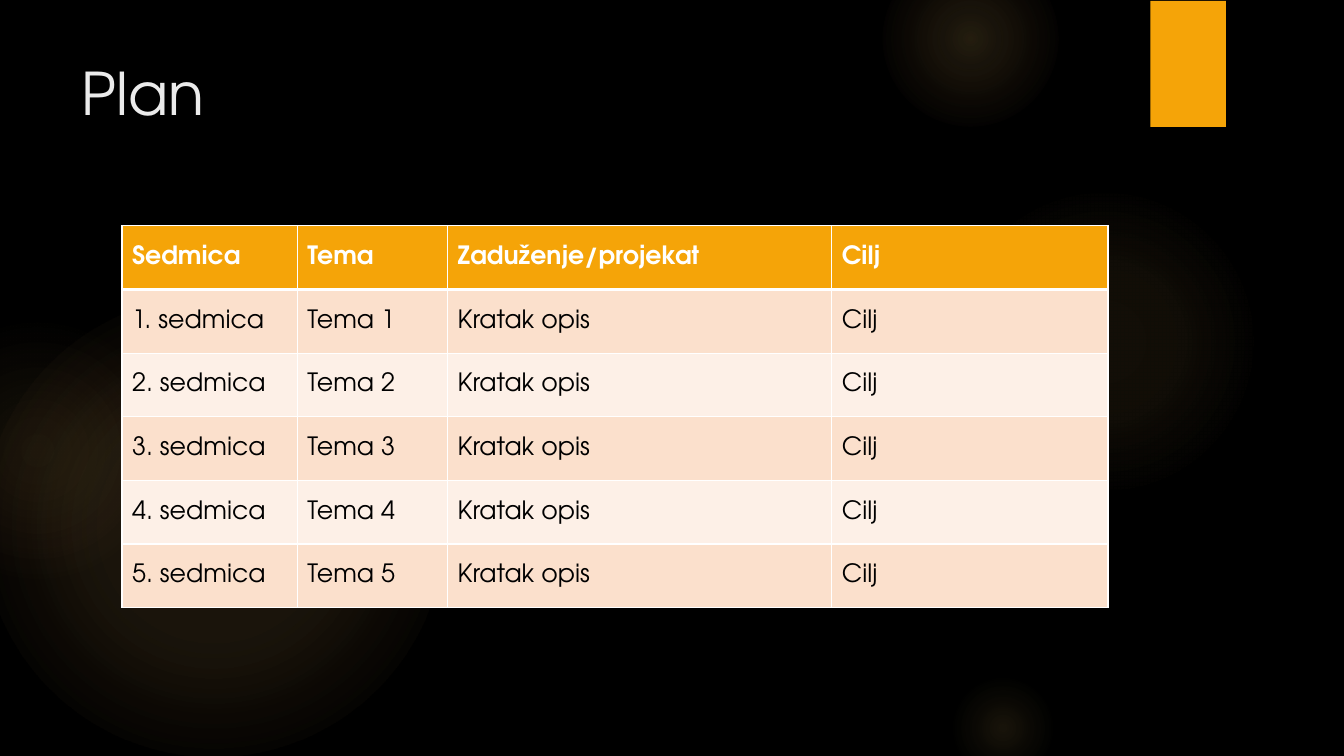
from lxml.etree import SubElement
from pptx import Presentation
from pptx.dml.color import RGBColor
from pptx.enum.shapes import MSO_SHAPE
from pptx.enum.text import MSO_ANCHOR
from pptx.oxml import parse_xml
from pptx.oxml.ns import nsdecls, qn
from pptx.util import Inches, Pt

FONT = "TeX Gyre Adventor"
BLACK = RGBColor(0x00, 0x00, 0x00)
WHITE = RGBColor(0xFF, 0xFF, 0xFF)
PALE = RGBColor(0xEB, 0xEB, 0xEB)
AMBER = RGBColor(0xF5, 0xA4, 0x08)
GLOW = RGBColor(0xFA, 0xC9, 0x6A)
CORAL = RGBColor(0xF5, 0x9B, 0x74)
PEACH = RGBColor(0xFB, 0xE0, 0xCC)
CREAM = RGBColor(0xFD, 0xF0, 0xE7)

GLOWS = [
    (-0.17, 2.93, 4.58, [(0, 11), (36, 10), (75, 0)], GLOW),
    (-0.92, 3.18, 2.58, [(0, 8), (36, 5), (71, 0)], CORAL),
    (9.41, 1.85, 3.08, [(0, 7), (36, 6), (69, 0)], GLOW),
    (8.75, -0.49, 1.75, [(0, 14), (36, 7), (73, 0)], GLOW),
    (9.41, 6.68, 1.08, [(0, 10), (31, 5), (66, 0)], GLOW),
]
HEADS = ["Sedmica", "Tema", "Zaduženje/projekat", "Cilj"]
ROWS = [HEADS] + [
    [f"{week}. sedmica", f"Tema {week}", "Kratak opis", "Cilj"]
    for week in range(1, 6)
]
WIDTHS = [1.74, 1.49, 3.81, 2.74]


def add_glow(slide, left, top, size, stops, edge):
    """Draw a round glow that fades out to the edge colour."""
    shape = slide.shapes.add_shape(
        MSO_SHAPE.OVAL, Inches(left), Inches(top), Inches(size), Inches(size))
    shape.shadow.inherit = False
    shape.line.fill.background()
    shape.fill.background()
    marks = "".join(
        f'<a:gs pos="{pos * 1000}"><a:srgbClr val="{GLOW if alpha else edge}">'
        f'<a:alpha val="{alpha * 1000}"/></a:srgbClr></a:gs>'
        for pos, alpha in stops)
    blend = parse_xml(
        f'<a:gradFill {nsdecls("a")}><a:gsLst>{marks}</a:gsLst>'
        '<a:path path="circle"><a:fillToRect l="50000" t="50000" r="50000" '
        'b="50000"/></a:path></a:gradFill>')
    props = shape.element.spPr
    props.replace(props.find(qn("a:noFill")), blend)


def add_tab(slide, left, top, width, height):
    """Draw the amber tab with its soft shadow."""
    tab = slide.shapes.add_shape(
        MSO_SHAPE.RECTANGLE, Inches(left), Inches(top), Inches(width), Inches(height))
    tab.fill.solid()
    tab.fill.fore_color.rgb = AMBER
    tab.line.fill.background()
    tab.shadow.inherit = False
    effects = tab.element.spPr.find(qn("a:effectLst"))
    shade = SubElement(effects, qn("a:outerShdw"), blurRad=str(Pt(3)),
                       dist=str(Pt(2)), dir="5400000", rotWithShape="0")
    tint = SubElement(shade, qn("a:srgbClr"), val=str(BLACK))
    SubElement(tint, qn("a:alpha"), val="45000")


def set_text(frame, text, size, color, bold=False):
    """Fill a text frame with one styled paragraph."""
    frame.text = text
    font = frame.paragraphs[0].font
    font.name, font.size, font.bold = FONT, Pt(size), bold
    font.color.rgb = color


def add_title(slide, left, top, width, height):
    """Place the slide title."""
    box = slide.shapes.add_textbox(
        Inches(left), Inches(top), Inches(width), Inches(height))
    box.text_frame.word_wrap = True
    set_text(box.text_frame, "Plan", 42, PALE)


def set_edges(cell, above, below):
    """Give a cell white borders, with its own top and bottom widths."""
    props = cell._tc.get_or_add_tcPr()
    sides = [("L", 1), ("R", 1), ("T", above), ("B", below)]
    for spot, (side, width) in enumerate(sides):
        props.insert(spot, parse_xml(
            f'<a:ln{side} {nsdecls("a")} w="{Pt(width)}"><a:solidFill>'
            f'<a:srgbClr val="{WHITE}"/></a:solidFill></a:ln{side}>'))


def add_plan(slide, left, top, width, height):
    """Build the weekly plan table in the given box."""
    table = slide.shapes.add_table(
        len(ROWS), len(HEADS), Inches(left), Inches(top),
        Inches(width), Inches(height)).table
    for column, span in zip(table.columns, WIDTHS):
        column.width = Inches(span)
    for i, texts in enumerate(ROWS):
        head = i == 0
        fill = AMBER if head else PEACH if i % 2 else CREAM
        for j, text in enumerate(texts):
            cell = table.cell(i, j)
            cell.vertical_anchor = MSO_ANCHOR.MIDDLE
            cell.fill.solid()
            cell.fill.fore_color.rgb = fill
            set_text(cell.text_frame, text, 18, WHITE if head else BLACK, head)
            set_edges(cell, 3 if i == 1 else 1, 3 if head else 1)


def main():
    """Build and save the slide."""
    deck = Presentation()
    deck.slide_width, deck.slide_height = Inches(13.33), Inches(7.5)
    slide = deck.slides.add_slide(deck.slide_layouts[6])
    slide.background.fill.solid()
    slide.background.fill.fore_color.rgb = BLACK
    for glow in GLOWS:
        add_glow(slide, *glow)
    add_tab(slide, 11.41, 0.01, 0.75, 1.25)
    add_title(slide, 0.71, 0.51, 10.29, 1.53)
    add_plan(slide, 1.21, 2.24, 9.78, 3.79)
    deck.save("out.pptx")


if __name__ == "__main__":
    main()
